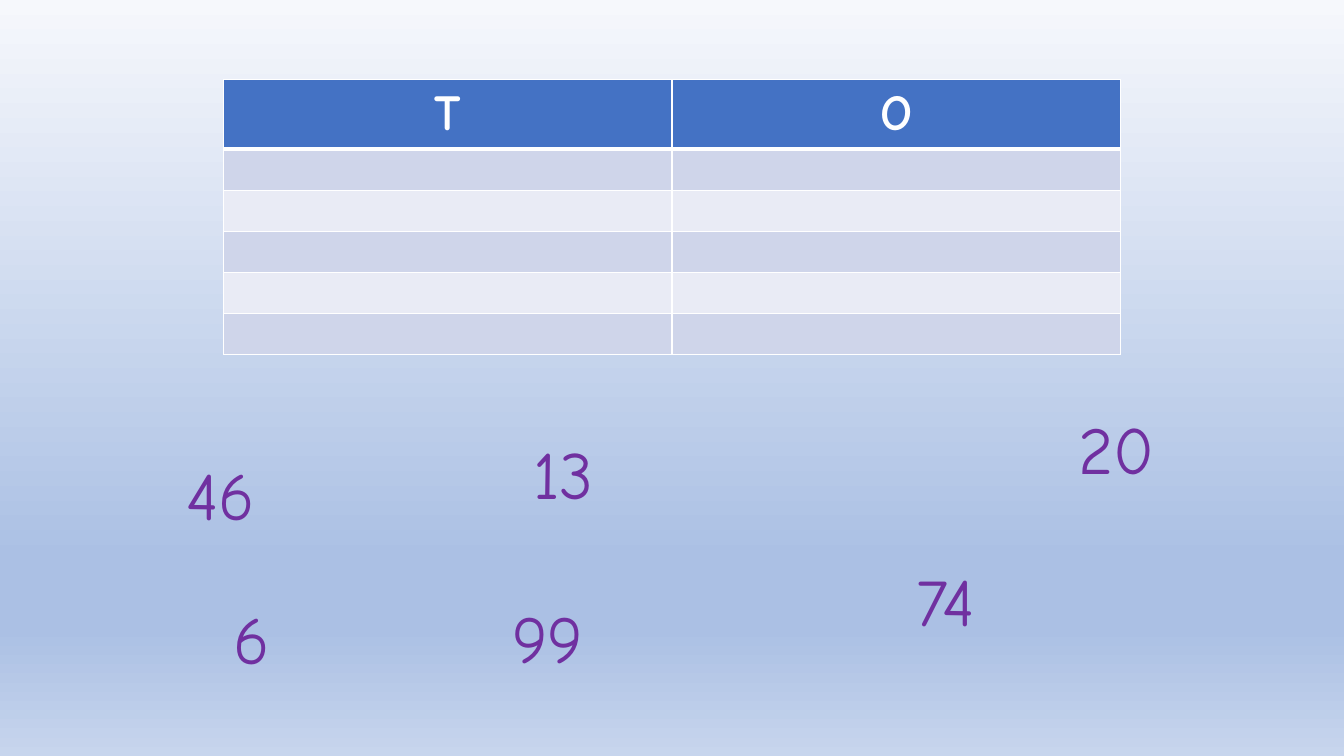
import pptx
import pptx.util
import pptx.dml.color
import pptx.enum.text
import pptx.oxml
import pptx.oxml.ns
import lxml.etree

Inches, Pt = pptx.util.Inches, pptx.util.Pt
qn = pptx.oxml.ns.qn

FONT = "Comic Neue"
COLORS = {
    "white": "FFFFFF",
    "head": "4472C4",
    "dark": "CFD5EA",
    "light": "E9EBF5",
    "number": "7030A0",
}
STOPS = [(0, "F6F8FC"), (74, "ABC0E4"), (83, "ABC0E4"), (100, "C7D5ED")]
NUMBERS = [
    ("46", 1.75, 4.45),
    ("13", 5.19, 4.24),
    ("99", 4.98, 5.87),
    ("74", 8.99, 5.5),
    ("6", 2.22, 5.88),
    ("20", 10.6, 3.99),
]


def rgb(name):
    return pptx.dml.color.RGBColor.from_string(COLORS[name])


def add_run(para, text, size, color, bold=False):
    run = para.add_run()
    run.text = text
    run.font.name = FONT
    run.font.size = Pt(size)
    run.font.bold = bold
    run.font.color.rgb = rgb(color)


def paint_back(slide):
    fill = slide.background.fill
    fill.gradient()
    fill.gradient_angle = 270
    stops = slide.element.find(".//" + qn("a:gsLst"))
    for stop in list(stops):
        stops.remove(stop)
    for place, color in STOPS:
        stop = lxml.etree.SubElement(stops, qn("a:gs"), pos=str(place * 1000))
        lxml.etree.SubElement(stop, qn("a:srgbClr"), val=color)


def style_cell(cell, color, top, bottom):
    # Borders go before the fill in the cell properties
    props = cell._tc.get_or_add_tcPr()
    for side, width in (("L", 1), ("R", 1), ("T", top), ("B", bottom)):
        line = lxml.etree.SubElement(props, qn("a:ln" + side), w=str(Pt(width)))
        solid = lxml.etree.SubElement(line, qn("a:solidFill"))
        lxml.etree.SubElement(solid, qn("a:srgbClr"), val=COLORS["white"])
    cell.fill.solid()
    cell.fill.fore_color.rgb = rgb(color)


def add_chart_grid(slide, left, top, width, height):
    heads = ["T", "O"]
    rows, head_high = 6, 0.69
    table = slide.shapes.add_table(
        rows, len(heads), Inches(left), Inches(top), Inches(width), Inches(height)
    ).table
    for col in table.columns:
        col.width = Inches(width / len(heads))

    # Header row, then bands of alternating colour
    for r, row in enumerate(table.rows):
        row.height = Inches(head_high if r == 0 else (height - head_high) / (rows - 1))
        color = "head" if r == 0 else "dark" if r % 2 else "light"
        for cell in row.cells:
            style_cell(cell, color, 3 if r == 1 else 1, 3 if r == 0 else 1)

    for c, head in enumerate(heads):
        para = table.cell(0, c).text_frame.paragraphs[0]
        para.alignment = pptx.enum.text.PP_ALIGN.CENTER
        add_run(para, head, 36, "white", True)


def add_number(slide, text, left, top, width=1.98, height=0.91):
    box = slide.shapes.add_textbox(
        Inches(left), Inches(top), Inches(width), Inches(height)
    )
    frame = box.text_frame
    frame.word_wrap = True
    frame.auto_size = pptx.enum.text.MSO_AUTO_SIZE.SHAPE_TO_FIT_TEXT
    add_run(frame.paragraphs[0], text, 48, "number")


def main():
    deck = pptx.Presentation()
    deck.slide_width, deck.slide_height = Inches(13.33), Inches(7.5)
    slide = deck.slides.add_slide(deck.slide_layouts[6])
    paint_back(slide)
    # Place value table
    add_chart_grid(slide, 2.22, 0.79, 8.89, 2.73)
    # Numbers to sort
    for text, left, top in NUMBERS:
        add_number(slide, text, left, top)
    deck.save("out.pptx")


if __name__ == "__main__":
    main()
